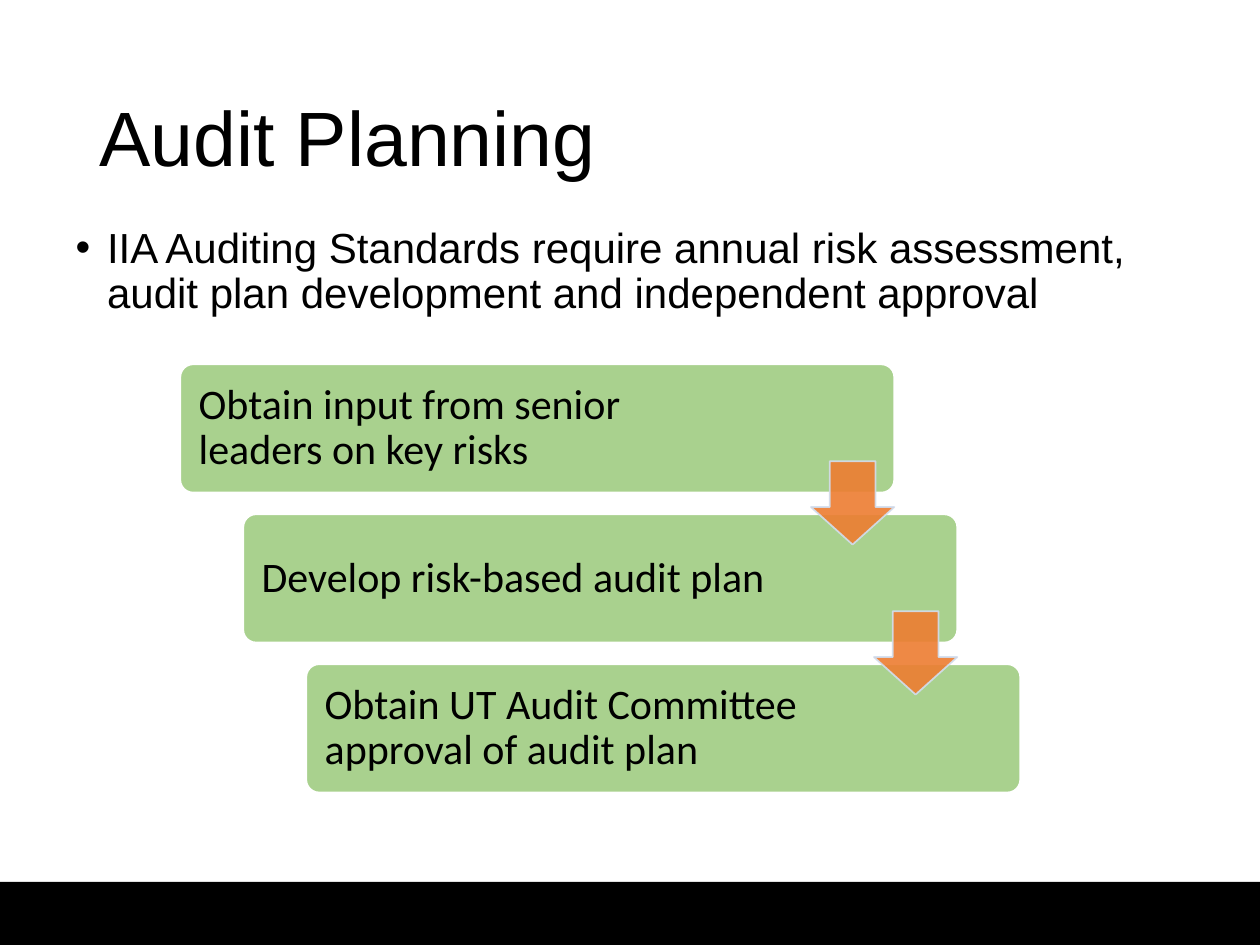
from dataclasses import dataclass
from lxml.etree import SubElement
from pptx import Presentation
from pptx.dml.color import RGBColor as RGB
from pptx.enum.shapes import MSO_SHAPE as SHAPE
from pptx.enum.text import MSO_ANCHOR as ANCHOR, MSO_AUTO_SIZE as AUTO, PP_ALIGN as ALIGN
from pptx.oxml.ns import qn
from pptx.util import Pt


@dataclass
class Theme:
    text: RGB = RGB.from_string("000000")
    band: RGB = RGB.from_string("000000")
    step: RGB = RGB.from_string("A9D18E")
    step_line: RGB = RGB.from_string("FFFFFF")
    arrow: RGB = RGB.from_string("ED7D31")
    arrow_line: RGB = RGB.from_string("D2DEEF")
    title_size: int = 44
    body_size: int = 24
    font: str = "Arial"
    step_font: str = "Calibri"


theme = Theme()


def add_box(kind, left, top, width, height, fill, line=None):
    sp = s.shapes.add_shape(kind, Pt(left), Pt(top), Pt(width), Pt(height))
    sp.shadow.inherit = False
    sp.fill.solid()
    sp.fill.fore_color.rgb = fill
    if line is None:
        sp.line.fill.background()
    else:
        sp.line.color.rgb = line
        sp.line.width = Pt(1)
    return sp


def write(sp, text, size, font, anchor):
    tf = sp.text_frame
    tf.word_wrap = True
    tf.auto_size = AUTO.NONE
    tf.vertical_anchor = anchor
    p = tf.paragraphs[0]
    p.alignment = ALIGN.LEFT
    p.line_spacing = 0.9
    p.space_before = Pt(0)
    r = p.add_run()
    r.text = text
    r.font.size = Pt(size)
    r.font.name = font
    r.font.color.rgb = theme.text
    return p


prs = Presentation()
prs.slide_width, prs.slide_height = Pt(720), Pt(540)
s = prs.slides.add_slide(prs.slide_layouts[1])

add_box(SHAPE.RECTANGLE, 0, 504, 720, 36, theme.band)

title, body = s.placeholders
title.left, title.top, title.width, title.height = Pt(49.5), Pt(28.75), Pt(621), Pt(104.4)
write(title, "Audit Planning", theme.title_size, theme.font, ANCHOR.MIDDLE)

body.left, body.top, body.width, body.height = Pt(36), Pt(126), Pt(648), Pt(356.4)
p = write(
    body,
    "IIA Auditing Standards require annual risk assessment, audit plan development and independent approval",
    theme.body_size, theme.font, ANCHOR.TOP,
)
pPr = p._p.get_or_add_pPr()
pPr.set("marL", str(Pt(18)))
pPr.set("indent", str(-Pt(18)))
SubElement(pPr, qn("a:buFont"), typeface="Arial")
SubElement(pPr, qn("a:buChar"), char="•")

steps = [
    "Obtain input from senior leaders on key risks",
    "Develop risk-based audit plan",
    "Obtain UT Audit Committee approval of audit plan",
]
left, top, width, height = 103, 208.2, 408, 73.3
dx, dy = 36, 85.7
arrow_size = 47.6

for i, text in enumerate(steps):
    sp = add_box(SHAPE.ROUNDED_RECTANGLE, left + i * dx, top + i * dy, width, height,
                 theme.step, theme.step_line)
    sp.adjustments[0] = 0.1
    tf = sp.text_frame
    tf.margin_left, tf.margin_right = Pt(8.4), Pt(93)
    tf.margin_top = tf.margin_bottom = Pt(7.2)
    write(sp, text, theme.body_size, theme.step_font, ANCHOR.MIDDLE)

for i in range(len(steps) - 1):
    sp = add_box(SHAPE.DOWN_ARROW, left + width - arrow_size + i * dx, top + 55.4 + i * dy,
                 arrow_size, arrow_size, theme.arrow, theme.arrow_line)
    sp.adjustments[0], sp.adjustments[1] = 0.55, 0.45
    for color in sp._element.spPr.iter(qn("a:srgbClr")):
        SubElement(color, qn("a:alpha"), val="90000")

prs.save("out.pptx")
